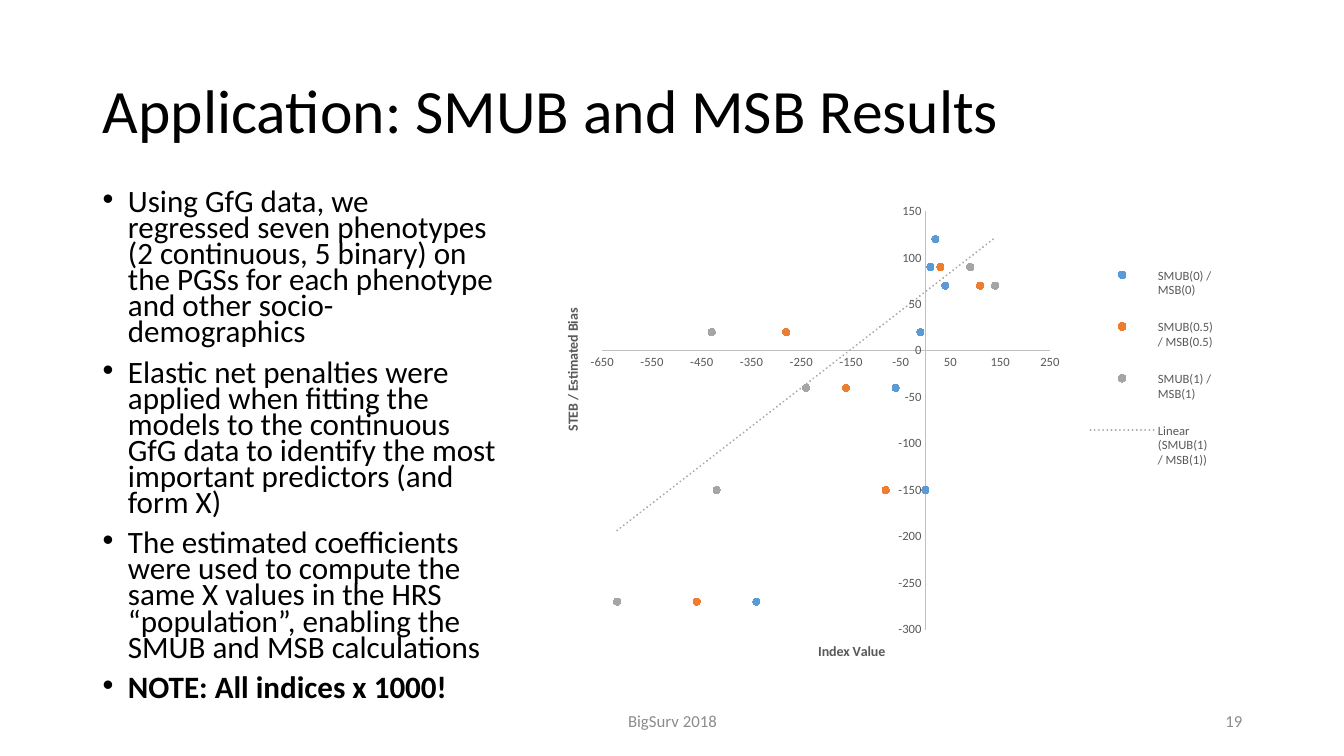
"""Build the slide on SMUB and MSB results with its scatter chart."""
from lxml.etree import SubElement
from pptx import Presentation
from pptx.chart.data import XyChartData
from pptx.dml.color import RGBColor
from pptx.enum.chart import XL_CHART_TYPE, XL_LEGEND_POSITION, XL_MARKER_STYLE, XL_TICK_MARK
from pptx.enum.text import MSO_ANCHOR, PP_ALIGN
from pptx.oxml import parse_xml
from pptx.oxml.ns import nsdecls, qn
from pptx.util import Inches, Pt


def style(font, size, color, bold=False):
    font.name = "Calibri"
    font.size = Pt(size)
    font.bold = bold
    font.color.rgb = RGBColor.from_string(color)


def place(element, index, **fractions):
    for old in element.findall(qn("c:layout")):
        element.remove(old)
    target = '<c:layoutTarget val="inner"/>' if index == 0 else ""
    modes = "".join(f'<c:{key}Mode val="edge"/>' for key in "xy")
    values = "".join(f'<c:{key} val="{value}"/>' for key, value in fractions.items())
    element.insert(index, parse_xml(
        f'<c:layout {nsdecls("c")}><c:manualLayout>{target}{modes}{values}'
        "</c:manualLayout></c:layout>"))


deck = Presentation()
deck.slide_width, deck.slide_height = Inches(13.33), Inches(7.5)
page = deck.slides.add_slide(deck.slide_layouts[5])

title = page.shapes.title
title.left, title.top, title.width, title.height = map(Inches, (0.92, 0.4, 11.5, 1.45))
title.text_frame.text = "Application: SMUB and MSB Results"
title.text_frame.vertical_anchor = MSO_ANCHOR.MIDDLE
para = title.text_frame.paragraphs[0]
para.alignment = PP_ALIGN.LEFT
para.line_spacing = 0.9
style(para.runs[0].font, 44, "000000")

points = [
    "Using GfG data, we regressed seven phenotypes (2 continuous, 5 binary) on the PGSs "
    "for each phenotype and other socio-demographics",
    "Elastic net penalties were applied when fitting the models to the continuous GfG data "
    "to identify the most important predictors (and form X)",
    "The estimated coefficients were used to compute the same X values in the HRS "
    "“population”, enabling the SMUB and MSB calculations",
    "NOTE: All indices x 1000!",
]
body = page.shapes.add_textbox(Inches(0.92), Inches(1.85), Inches(4.11), Inches(5.25))
body.text_frame.word_wrap = True
body.text_frame.text = "\n".join(points)
for para in body.text_frame.paragraphs:
    para.line_spacing = 0.7
    para.space_before = Pt(10)
    style(para.runs[0].font, 22.2, "000000", para.text == points[-1])
    properties = para._p.get_or_add_pPr()
    properties.set("marL", str(Inches(0.25)))
    properties.set("indent", str(Inches(-0.25)))
    SubElement(properties, qn("a:buFont"), typeface="Arial")
    SubElement(properties, qn("a:buChar"), char="•")

footers = [("BigSurv 2018", 4.42, 4.5, PP_ALIGN.CENTER), ("19", 9.42, 3, PP_ALIGN.RIGHT)]
for text, left, width, alignment in footers:
    box = page.shapes.add_textbox(Inches(left), Inches(6.95), Inches(width), Inches(0.4))
    box.text_frame.word_wrap = True
    box.text_frame.vertical_anchor = MSO_ANCHOR.MIDDLE
    box.text_frame.text = text
    para = box.text_frame.paragraphs[0]
    para.alignment = alignment
    style(para.runs[0].font, 12, "8C8C8C")

biases = [-270, 90, 120, 70, -150, 20, -40]
indices = [
    ("SMUB(0) / MSB(0)", "5B9BD5", [-340, 10, 20, 40, 0, -10, -60]),
    ("SMUB(0.5) / MSB(0.5)", "ED7D31", [-460, 30, 20, 110, -80, -280, -160]),
    ("SMUB(1) / MSB(1)", "A5A5A5", [-620, 90, 20, 140, -420, -430, -240]),
]
data = XyChartData()
for name, color, values in indices:
    series = data.add_series(name)
    for value, bias in zip(values, biases):
        series.add_data_point(value, bias)
chart = page.shapes.add_chart(
    XL_CHART_TYPE.XY_SCATTER, Inches(5.29), Inches(1.85), Inches(6.83), Inches(4.94), data).chart
style(chart.font, 10, "000000")
chart.has_title = False
plot = chart.plots[0]
plot.vary_by_categories = False
for series, (name, color, values) in zip(plot.series, indices):
    series.smooth = False
    series.format.line.fill.background()
    series.marker.style = XL_MARKER_STYLE.CIRCLE
    series.marker.size = 5
    series.marker.format.fill.solid()
    series.marker.format.fill.fore_color.rgb = RGBColor.from_string(color)
    series.marker.format.line.color.rgb = RGBColor.from_string(color)

trend = parse_xml(
    f'<c:trendline {nsdecls("c", "a")}><c:spPr><a:ln w="{Pt(1.5)}" cap="rnd"><a:solidFill>'
    '<a:srgbClr val="A5A5A5"/></a:solidFill><a:prstDash val="sysDot"/></a:ln></c:spPr>'
    '<c:trendlineType val="linear"/><c:dispRSqr val="0"/><c:dispEq val="0"/></c:trendline>')
chart.element.findall(f'.//{qn("c:xVal")}')[-1].addprevious(trend)

axes = [
    (chart.category_axis, "Index Value", -650, 250, 100, 0.41, 0.91),
    (chart.value_axis, "STEB / Estimated Bias", -300, 150, 50, 0.04, 0.24),
]
for axis, text, low, high, step, x, y in axes:
    axis.minimum_scale, axis.maximum_scale, axis.major_unit = low, high, step
    axis.has_major_gridlines = False
    axis.major_tick_mark = axis.minor_tick_mark = XL_TICK_MARK.NONE
    axis.format.line.color.rgb = RGBColor.from_string("BFBFBF")
    axis.format.line.width = Pt(0.75)
    style(axis.tick_labels.font, 9, "595959")
    axis.axis_title.text_frame.text = text
    style(axis.axis_title.text_frame.paragraphs[0].runs[0].font, 10, "595959", True)
    place(axis.axis_title.element, 1, x=x, y=y)

chart.has_legend = True
chart.legend.position = XL_LEGEND_POSITION.RIGHT
chart.legend.include_in_layout = False
style(chart.legend.font, 9, "595959")
place(chart.element.find(f'.//{qn("c:legend")}'), 1, x=0.81, y=0.12, w=0.18, h=0.49)
place(chart.element.find(f'.//{qn("c:plotArea")}'), 0, x=0.1, y=0.05, w=0.65, h=0.84)

deck.save("out.pptx")
